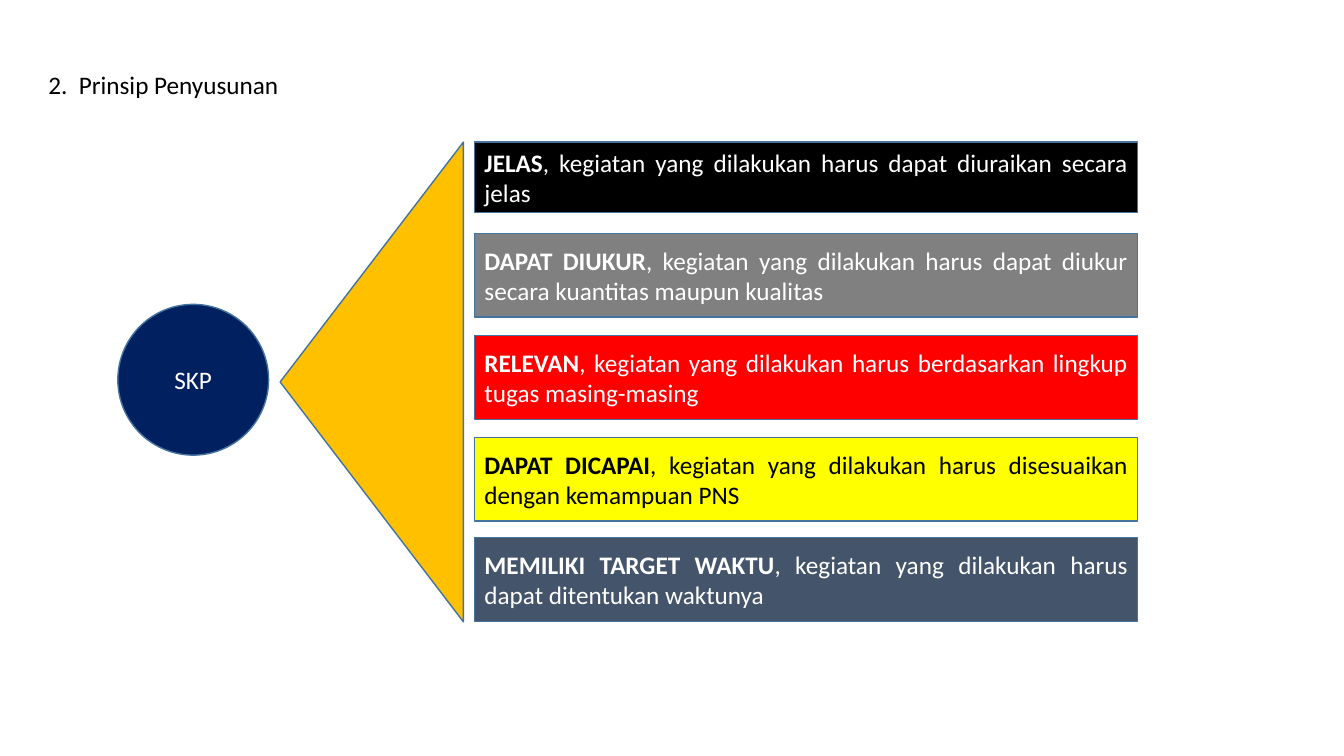
from pptx import Presentation, util as u
from pptx.dml.color import RGBColor
from pptx.enum import shapes, text

KIND = shapes.MSO_SHAPE
ALIGN = text.PP_ALIGN
RULES = [
    ("JELAS", ", kegiatan yang dilakukan harus dapat diuraikan secara jelas",
     "000000", "FFFFFF", 0, 1.78),
    ("DAPAT DIUKUR", ", kegiatan yang dilakukan harus dapat diukur secara kuantitas maupun kualitas",
     "808080", "FFFFFF", 2.3, 2.11),
    ("RELEVAN", ", kegiatan yang dilakukan harus berdasarkan lingkup tugas masing-masing ",
     "FF0000", "FFFFFF", 4.88, 2.11),
    ("DAPAT DICAPAI", ", kegiatan yang dilakukan harus disesuaikan dengan kemampuan PNS",
     "FFFF00", "000000", 7.44, 2.11),
    ("MEMILIKI TARGET WAKTU", ", kegiatan yang dilakukan harus dapat ditentukan waktunya",
     "44546A", "FFFFFF", 9.97, 2.11),
]


def tint(code):
    return RGBColor.from_string(code)


def style(item, form):
    for key, value in form.items():
        setattr(item, key, value)


def write(shape, parts, color, align, anchor):
    frame = shape.text_frame
    style(frame, {"word_wrap": True, "vertical_anchor": anchor})
    para = frame.paragraphs[0]
    para.alignment = align
    for words, bold in parts:
        run = para.add_run()
        run.text = words
        style(run.font, {"name": "Calibri", "size": u.Pt(18), "bold": bold})
        run.font.color.rgb = tint(color)


def block(slide, kind, box, fill):
    shape = slide.shapes.add_shape(kind, *map(u.Cm, box))
    shape.shadow.inherit = False
    shape.fill.solid()
    shape.fill.fore_color.rgb = tint(fill)
    shape.line.color.rgb = tint("43739E")
    shape.line.width = u.Pt(1)
    return shape


def title(slide, box):
    label = slide.shapes.add_textbox(*map(u.Cm, box))
    write(label, [("2.  Prinsip Penyusunan", False)], "000000",
          ALIGN.LEFT, text.MSO_ANCHOR.TOP)


def hub(slide, box):
    disc = block(slide, KIND.OVAL, box, "002060")
    write(disc, [("SKP", False)], "FFFFFF", ALIGN.CENTER, text.MSO_ANCHOR.MIDDLE)


def fan(slide, box):
    left, top, wide, high = box
    shift = (high - wide) / 2
    wedge = block(slide, KIND.ISOSCELES_TRIANGLE,
                  (left - shift, top + shift, high, wide), "FFC000")
    wedge.rotation = 270


def rules(slide, box):
    left, top, wide, _ = box
    for head, body, fill, color, drop, high in RULES:
        bar = block(slide, KIND.RECTANGLE, (left, top + drop, wide, high), fill)
        write(bar, [(head, True), (body, False)], color,
              ALIGN.JUSTIFY, text.MSO_ANCHOR.MIDDLE)


def main():
    deck = Presentation()
    style(deck, {"slide_width": u.Cm(33.87), "slide_height": u.Cm(19.05)})
    slide = deck.slides.add_slide(deck.slide_layouts[6])
    hub(slide, (2.97, 7.67, 3.8, 3.8))
    fan(slide, (7.06, 3.58, 4.62, 12.09))
    rules(slide, (11.96, 3.58, 16.71, 12.08))
    title(slide, (0.97, 1.63, 9.14, 1.02))
    deck.save("out.pptx")


if __name__ == "__main__":
    main()
